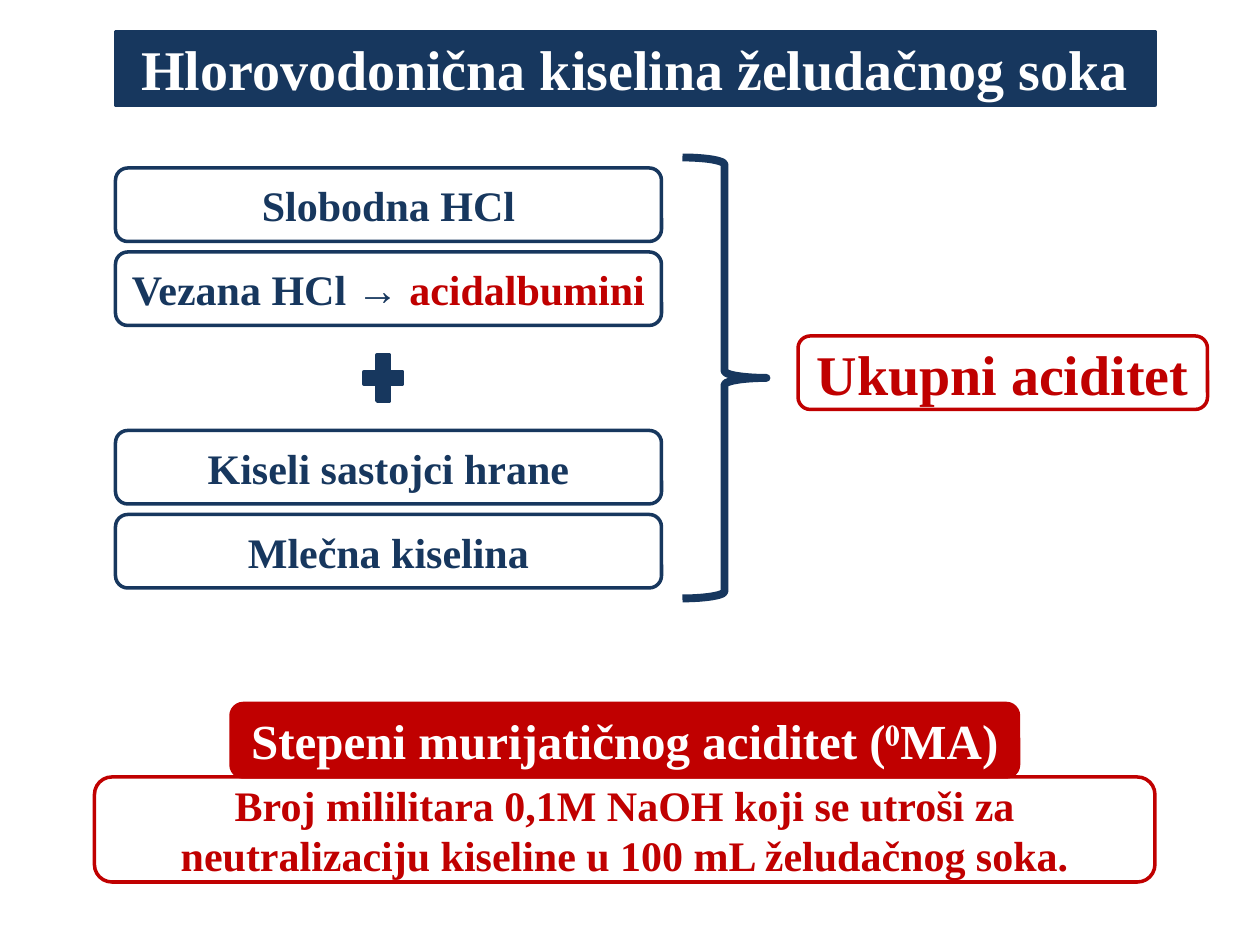
"""Build a slide on the hydrochloric acid of gastric juice."""
from lxml import etree
from pptx import Presentation, util as u
from pptx.dml.color import RGBColor
from pptx.enum import shapes, text
from pptx.oxml.ns import qn

NAVY, RED, WHITE = "17375E", "C00000", "FFFFFF"
FONT = "Times New Roman"
COLS, ROWS = 120, 90
LEFT, WIDE, HIGH, STEP = 11, 52, 7, 8

TITLE = "Hlorovodonična kiselina želudačnog soka"
GROUPS = [
    (16, [[("Slobodna HCl", NAVY)],
          [("Vezana HCl → ", NAVY), ("acidalbumini", RED)]]),
    (41, [[("Kiseli sastojci hrane", NAVY)],
          [("Mlečna kiselina", NAVY)]]),
]
TOTAL = "Ukupni aciditet"
UNIT = "Stepeni murijatičnog aciditet (⁰MA)"
RULE = ("Broj mililitara 0,1M NaOH koji se utroši za "
        "neutralizaciju kiseline u 100 mL želudačnog soka.")

deck = Presentation()
deck.slide_width, deck.slide_height = u.Inches(10), u.Inches(7.5)
slide = deck.slides.add_slide(deck.slide_layouts[5])


def tint(part, hue):
    part.rgb = RGBColor.from_string(hue)


def place(cell):
    x, y, w, h = cell
    dx, dy = deck.slide_width / COLS, deck.slide_height / ROWS
    return [round(n) for n in (x * dx, y * dy, w * dx, h * dy)]


def paint(shape, line, fill=None, width=2):
    if fill:
        shape.fill.solid()
        tint(shape.fill.fore_color, fill)
    else:
        shape.fill.background()
    tint(shape.line.color, line)
    shape.line.width = u.Pt(width)


def draw(kind, cell, line, **look):
    shape = slide.shapes.add_shape(kind, *place(cell))
    shape.shadow.inherit = False
    paint(shape, line, **look)
    return shape


def write(shape, runs, size=24, wrap=False):
    frame = shape.text_frame
    frame.auto_size = text.MSO_AUTO_SIZE.NONE
    frame.word_wrap = wrap
    frame.vertical_anchor = text.MSO_ANCHOR.MIDDLE
    para = frame.paragraphs[0]
    para.alignment = text.PP_ALIGN.CENTER
    for words, hue in runs:
        run = para.add_run()
        run.text = words
        font = run.font
        font.name, font.size, font.bold = FONT, u.Pt(size), True
        tint(font.color, hue)


def label(runs, cell, line, fill=None, **style):
    box = draw(shapes.MSO_SHAPE.ROUNDED_RECTANGLE, cell, line, fill=fill)
    write(box, runs, **style)


def head():
    title = slide.shapes.title
    title.left, title.top, title.width, title.height = place((LEFT, 3, 99, HIGH))
    geom = etree.SubElement(title._element.spPr, qn("a:prstGeom"), prst="roundRect")
    etree.SubElement(geom, qn("a:avLst"))
    paint(title, NAVY, NAVY)
    write(title, [(TITLE, WHITE)], size=32)


def main():
    head()
    for top, items in GROUPS:
        for i, runs in enumerate(items):
            label(runs, (LEFT, top + i * STEP, WIDE, HIGH), NAVY)
    draw(shapes.MSO_SHAPE.MATH_PLUS, (34, 33, 5, 6), NAVY, fill=NAVY)
    draw(shapes.MSO_SHAPE.RIGHT_BRACE, (65, 15, 8, 42), NAVY, width=4.5)
    label([(TOTAL, RED)], (76, 32, 39, HIGH), RED, size=32)
    label([(UNIT, WHITE)], (22, 67, 75, HIGH), RED, fill=RED, size=28)
    label([(RULE, RED)], (9, 74, 101, 10), RED, wrap=True)
    deck.save("out.pptx")


if __name__ == "__main__":
    main()
